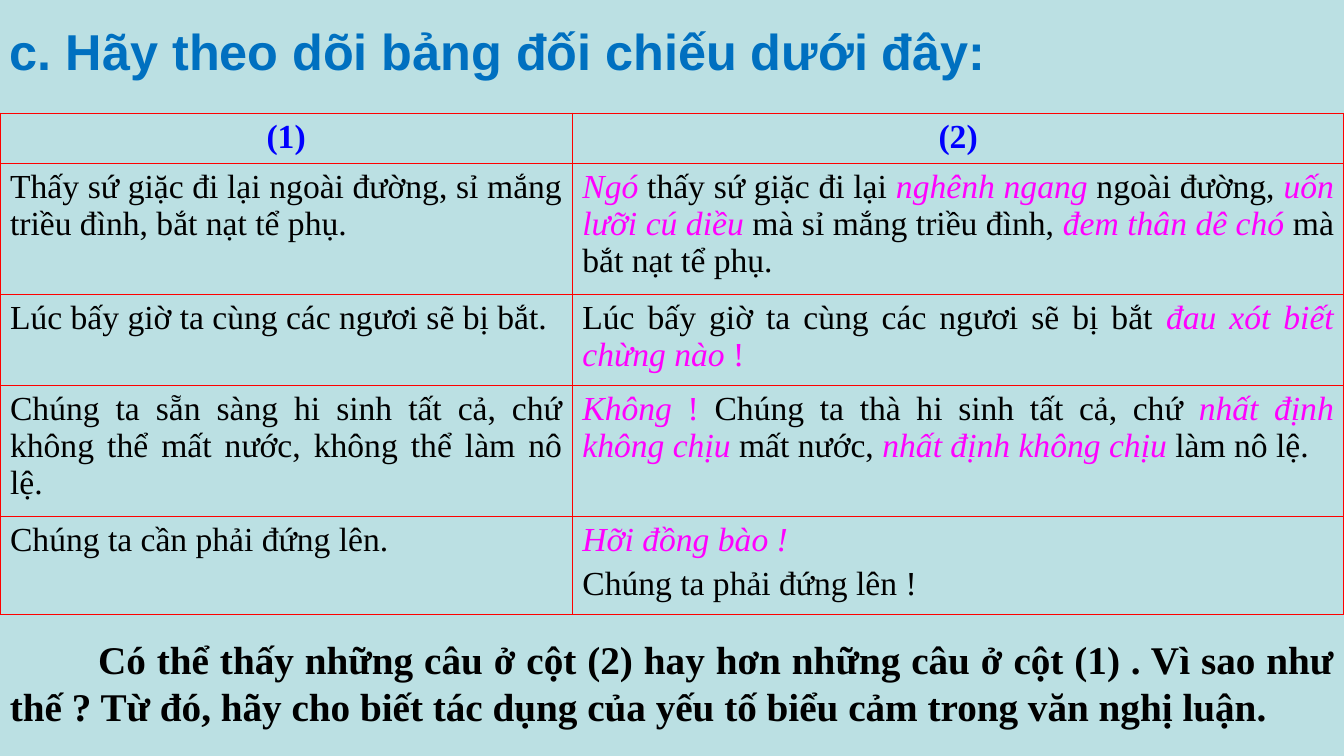
import pptx
import pptx.dml.color
import pptx.enum.text
import pptx.oxml
import pptx.oxml.ns
import pptx.util

Pt = pptx.util.Pt
ALIGN = pptx.enum.text.PP_ALIGN
SERIF = "Times New Roman"
BLACK, BLUE, PINK, RED = "000000", "0000FF", "FF00FF", "FF0000"
COLUMN_WIDTHS = [408.8, 551.2]
ROW_HEIGHTS = [35.7, 93.6, 65, 93.6, 69.3]


def colour(value):
    return pptx.dml.color.RGBColor.from_string(value)


def plain(text):
    return text, BLACK, False


def vivid(text, italic=True):
    return text, PINK, italic


COMPARISON = [
    (
        [[plain("Thấy sứ giặc đi lại ngoài đường, sỉ mắng triều đình, bắt nạt tể phụ.")]],
        [[
            vivid("Ngó "), plain("thấy sứ giặc đi lại "),
            vivid("nghênh ngang "), plain("ngoài đường, "),
            vivid("uốn lưỡi cú diều "), plain("mà sỉ mắng triều đình, "),
            vivid("đem thân dê chó "), plain("mà bắt nạt tể phụ."),
        ]],
    ),
    (
        [[plain("Lúc bấy giờ ta cùng các ngươi sẽ bị bắt.")]],
        [[
            plain("Lúc bấy giờ ta cùng các ngươi sẽ bị bắt "),
            vivid("đau xót biết chừng nào"), vivid(" !", False),
        ]],
    ),
    (
        [[plain("Chúng ta sẵn sàng hi sinh tất cả, chứ không thể mất nước, không thể làm nô lệ.")]],
        [[
            vivid("Không "), vivid("! ", False),
            plain("Chúng ta thà hi sinh tất cả, chứ "),
            vivid("nhất định không chịu "), plain("mất nước, "),
            vivid("nhất định không chịu "), plain("làm nô lệ."),
        ]],
    ),
    (
        [[plain("Chúng ta cần phải đứng lên.")]],
        [[vivid("Hỡi đồng bào !")], [plain("Chúng ta phải đứng lên !")]],
    ),
]


def add_span(para, text, font, size, value, bold=False, italic=False):
    span = para.add_run()
    span.text = text
    span.font.name = font
    span.font.size = Pt(size)
    span.font.bold = bold
    span.font.italic = italic
    span.font.color.rgb = colour(value)


def add_text(page, top, height, text, font, size, value, align, indent=0):
    box = page.shapes.add_textbox(0, Pt(top), Pt(960), Pt(height))
    box.text_frame.word_wrap = True
    para = box.text_frame.paragraphs[0]
    para.alignment = align
    para._p.get_or_add_pPr().set("indent", str(Pt(indent)))
    add_span(para, text, font, size, value, bold=True)


def add_borders(cell):
    properties = cell._tc.get_or_add_tcPr()
    for position, side in enumerate(("lnL", "lnR", "lnT", "lnB")):
        line = pptx.oxml.parse_xml(
            f'<a:{side} {pptx.oxml.ns.nsdecls("a")} w="{Pt(1)}"><a:solidFill>'
            f'<a:srgbClr val="{RED}"/></a:solidFill></a:{side}>'
        )
        properties.insert(position, line)


def fill_cell(cell, paragraphs, align, bold=False):
    cell.fill.background()
    add_borders(cell)
    frame = cell.text_frame
    for index, spans in enumerate(paragraphs):
        para = frame.add_paragraph() if index else frame.paragraphs[0]
        para.alignment = align
        if index:
            para.space_before = Pt(4.8)
        for text, value, italic in spans:
            add_span(para, text, SERIF, 24, value, bold, italic)


def add_comparison(page):
    frame = page.shapes.add_table(
        len(ROW_HEIGHTS), len(COLUMN_WIDTHS), 0, Pt(80.8),
        Pt(sum(COLUMN_WIDTHS)), Pt(sum(ROW_HEIGHTS)),
    )
    table = frame.table
    table.first_row = False
    table.horz_banding = False
    for column, width in zip(table.columns, COLUMN_WIDTHS):
        column.width = Pt(width)
    for row, height in zip(table.rows, ROW_HEIGHTS):
        row.height = Pt(height)
    for index in range(len(COLUMN_WIDTHS)):
        heading = [[(f"({index + 1})", BLUE, False)]]
        fill_cell(table.cell(0, index), heading, ALIGN.CENTER, bold=True)
    for row_index, contents in enumerate(COMPARISON, start=1):
        for index, paragraphs in enumerate(contents):
            fill_cell(table.cell(row_index, index), paragraphs, ALIGN.JUSTIFY)


def main():
    deck = pptx.Presentation()
    deck.slide_width = Pt(960)
    deck.slide_height = Pt(540)
    page = deck.slides.add_slide(deck.slide_layouts[6])
    page.background.fill.solid()
    page.background.fill.fore_color.rgb = colour("BBE0E3")
    add_text(page, 10.8, 69.8, "c. Hãy theo dõi bảng đối chiếu dưới đây:",
             "Arial", 36, "0070C0", ALIGN.LEFT)
    add_text(page, 450, 74.9,
             "Có thể thấy những câu ở cột (2) hay hơn những câu ở cột (1) . "
             "Vì sao như thế ? Từ đó, hãy cho biết tác dụng của yếu tố "
             "biểu cảm trong văn nghị luận.",
             SERIF, 28, BLACK, ALIGN.JUSTIFY, indent=63)
    add_comparison(page)
    deck.save("out.pptx")


if __name__ == "__main__":
    main()
